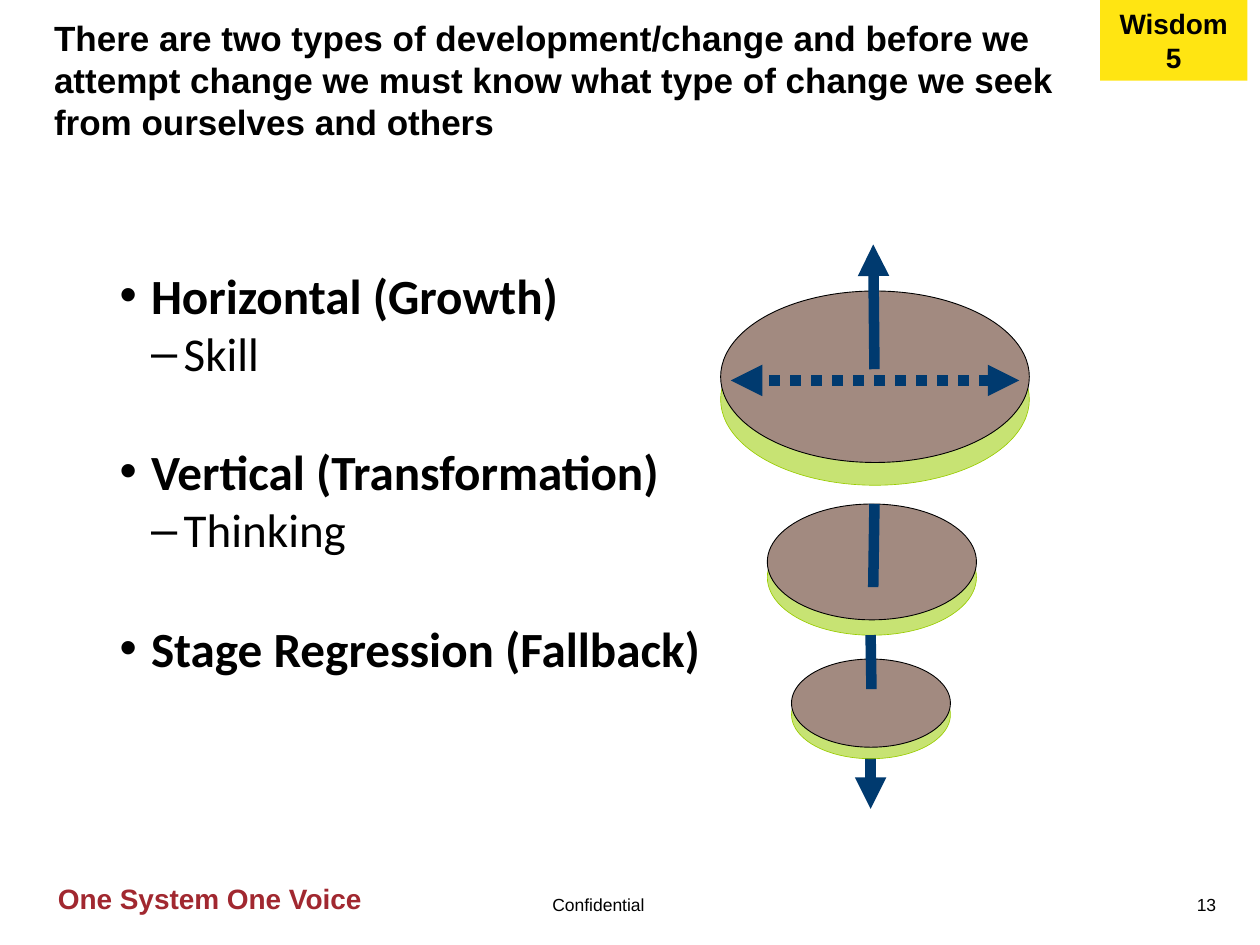
from lxml.etree import SubElement
from pptx import Presentation
from pptx.dml.color import RGBColor
from pptx.enum.dml import MSO_LINE
from pptx.enum.shapes import MSO_CONNECTOR, MSO_SHAPE
from pptx.enum.text import MSO_ANCHOR, PP_ALIGN
from pptx.oxml.ns import qn
from pptx.util import Pt

COLORS = {
    "text": "000000",
    "slogan": "A12830",
    "badge": "FFE512",
    "arrow": "003A6F",
    "disc": "A28A80",
    "rim": "99CC00",
}
BULLETS = [
    ("Horizontal (Growth)", "Skill"),
    ("Vertical (Transformation)", "Thinking"),
    ("Stage Regression (Fallback)", None),
]
DISCS = [
    (411.8, 166.3, 176.4, 98, 13),
    (438.5, 288, 119.5, 66.2, 8.8),
    (452.3, 376.6, 90.8, 50.4, 6.6),
]


def color(name):
    """Return the named colour."""
    return RGBColor.from_string(COLORS[name])


def set_font(para, size, name="Arial", bold=False, tint="text"):
    """Set the font of a whole paragraph."""
    para.font.size = Pt(size)
    para.font.name = name
    para.font.bold = bold
    para.font.color.rgb = color(tint)


def add_text(page, place, text, size, align=PP_ALIGN.LEFT, bold=False, tint="text"):
    """Add a wrapped one-paragraph text box and return the paragraph."""
    frame = page.shapes.add_textbox(*map(Pt, place)).text_frame
    frame.word_wrap = True
    para = frame.paragraphs[0]
    para.text = text
    para.alignment = align
    set_font(para, size, bold=bold, tint=tint)
    return para


def add_bullet(para, text, mark, size, left, hang, level, gap):
    """Fill a paragraph as a bullet with a hanging indent."""
    para.text = text
    para.level = level
    para.space_before = Pt(gap)
    set_font(para, size, "Calibri", bold=level == 0)
    properties = para._p.get_or_add_pPr()
    properties.set("marL", str(Pt(left)))
    properties.set("indent", str(-Pt(hang)))
    SubElement(properties, qn("a:buFont"), typeface="Arial")
    SubElement(properties, qn("a:buChar"), char=mark)


def add_bullets(page):
    """Add the list of change types with their details."""
    frame = page.shapes.add_textbox(Pt(61.2), Pt(135.4), Pt(370.8), Pt(305.3)).text_frame
    frame.word_wrap = True
    frame.margin_top = Pt(16)
    for index, (heading, detail) in enumerate(BULLETS):
        para = frame.add_paragraph() if index else frame.paragraphs[0]
        add_bullet(para, heading, "•", 28.1, 18, 18, 0, 34.7 if index else 0.2)
        if detail:
            add_bullet(frame.add_paragraph(), detail, "–", 26.9, 36.7, 18.7, 1, 0.2)


def add_shape(page, kind, place, fill, line=None, width=0.5):
    """Add a filled preset shape without shadow."""
    shape = page.shapes.add_shape(kind, *map(Pt, place))
    shape.shadow.inherit = False
    shape.fill.solid()
    shape.fill.fore_color.rgb = color(fill)
    if line:
        shape.line.color.rgb = color(line)
        shape.line.width = Pt(width)
    else:
        shape.line.fill.background()
    return shape


def add_disc(page, left, top, width, height, depth):
    """Add a disc above its translucent rim."""
    rim = add_shape(page, MSO_SHAPE.OVAL, (left, top + depth, width, height), "rim", "rim", 0.37)
    tint = rim.fill._xPr.find(qn("a:solidFill"))[0]
    SubElement(tint, qn("a:alpha"), val="55000")
    add_shape(page, MSO_SHAPE.OVAL, (left, top, width, height), "disc", "text")


def add_arrow(page, start, end, heads=(), dash=None):
    """Add a thick line with triangles at the given ends."""
    arrow = page.shapes.add_connector(MSO_CONNECTOR.STRAIGHT, *map(Pt, start + end))
    arrow.line.color.rgb = color("arrow")
    arrow.line.width = Pt(6)
    if dash:
        arrow.line.dash_style = dash
    for head in heads:
        SubElement(arrow.line._get_or_add_ln(), qn(f"a:{head}"), type="triangle")
    SubElement(arrow._element.spPr, qn("a:effectLst"))


def add_badge(page):
    """Add the yellow corner badge."""
    badge = add_shape(page, MSO_SHAPE.RECTANGLE, (628.6, 0, 84.2, 46.1), "badge")
    frame = badge.text_frame
    frame.word_wrap = True
    frame.vertical_anchor = MSO_ANCHOR.MIDDLE
    para = frame.paragraphs[0]
    para.text = "Wisdom 5"
    para.alignment = PP_ALIGN.CENTER
    set_font(para, 16, bold=True)


def add_diagram(page):
    """Add the stacked discs and the arrows of change."""
    add_arrow(page, (497.5, 433.4), (497.5, 462.2), ["tailEnd"])
    for disc in DISCS:
        add_disc(page, *disc)
    add_arrow(page, (499.7, 288), (499, 335.5))
    add_arrow(page, (582.5, 217.4), (417.6, 217.4), ["headEnd", "tailEnd"], MSO_LINE.ROUND_DOT)
    add_arrow(page, (499.7, 211), (499, 139.7), ["tailEnd"])
    add_arrow(page, (497.5, 362.9), (498, 393.8))


def main():
    """Build and save the slide."""
    deck = Presentation()
    deck.slide_width, deck.slide_height = Pt(720), Pt(540)
    page = deck.slides.add_slide(deck.slide_layouts[6])
    add_text(page, (669.6, 507.6, 32.4, 19.4), "13", 10, PP_ALIGN.RIGHT)
    add_text(page, (288, 507.6, 108, 19.4), "Confidential", 10, PP_ALIGN.CENTER)
    add_text(page, (18, 500.4, 203.8, 26.6), "One System One Voice", 16,
             PP_ALIGN.CENTER, True, "slogan")
    add_bullets(page)
    add_diagram(page)
    title = add_text(page, (23.8, 5.8, 604, 77.8),
                     "There are two types of development/change and before we attempt change "
                     "we must know what type of change we seek from ourselves and others",
                     20, bold=True)
    title.line_spacing = Pt(24)
    add_badge(page)
    deck.save("out.pptx")


if __name__ == "__main__":
    main()
